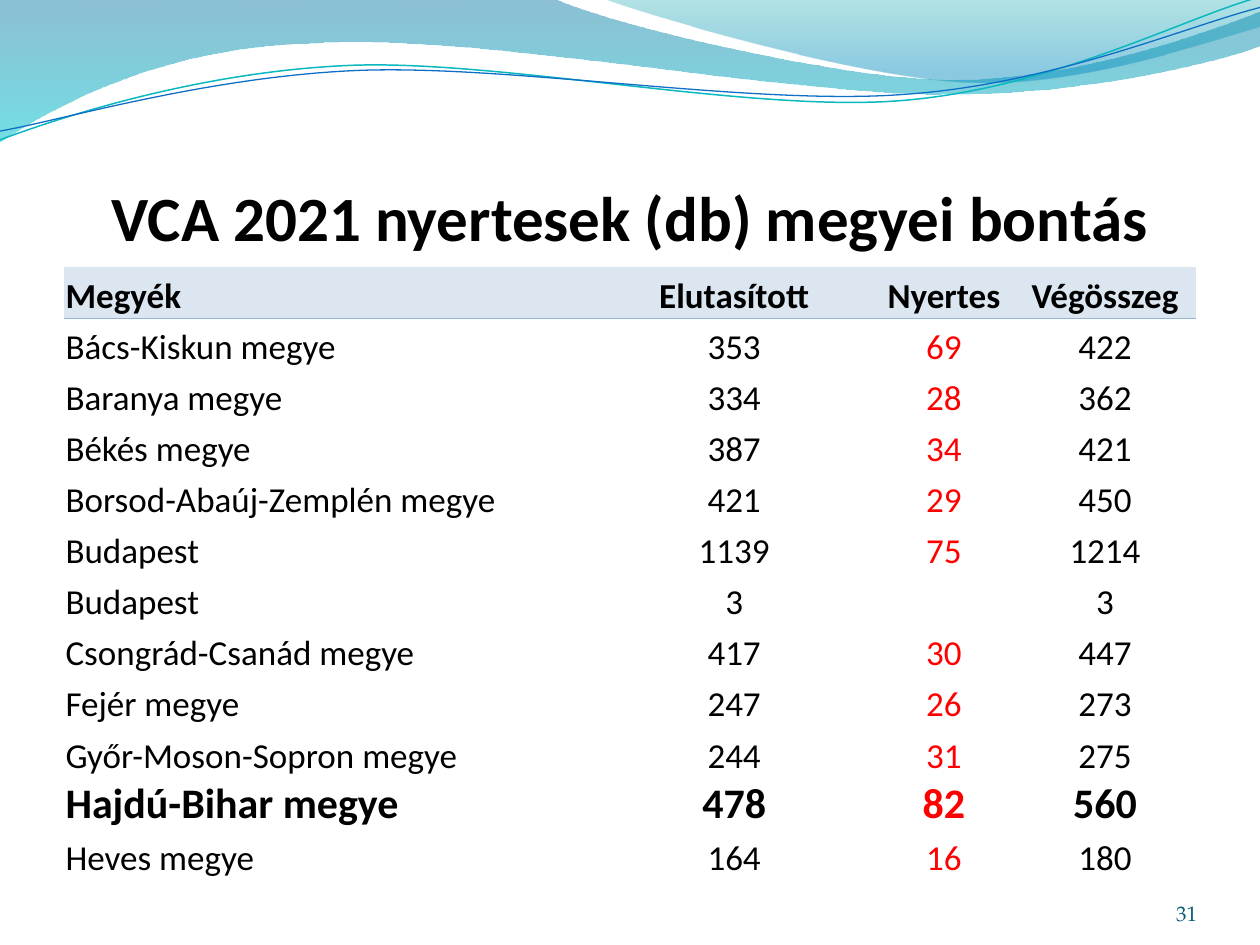
from math import cos, radians, sin

from lxml.etree import SubElement
from pptx import Presentation
from pptx.dml.color import RGBColor
from pptx.enum.text import MSO_ANCHOR as Anchor, PP_ALIGN as Align
from pptx.oxml import parse_xml
from pptx.oxml.ns import nsdecls, qn
from pptx.util import Pt

COLORS = {
    "text": "000000", "winner": "FF0000", "header": "DCE6F1", "rule": "95B3D7",
    "number": "045D75", "teal_line": "0AB8BF", "blue_line": "0F6FC6",
    "deep_blue": "0074A1", "aqua": "00C6CF", "teal": "00A1A9", "sky": "008BBF",
}
TITLE = "VCA 2021 nyertesek (db) megyei bontás"
PAGE_NUMBER = "31"
HEADER = ("Megyék", "Elutasított", "Nyertes", "Végösszeg")
COUNTIES = [
    ("Bács-Kiskun megye", 353, 69, 422),
    ("Baranya megye", 334, 28, 362),
    ("Békés megye", 387, 34, 421),
    ("Borsod-Abaúj-Zemplén megye", 421, 29, 450),
    ("Budapest", 1139, 75, 1214),
    ("Budapest", 3, "", 3),
    ("Csongrád-Csanád megye", 417, 30, 447),
    ("Fejér megye", 247, 26, 273),
    ("Győr-Moson-Sopron megye", 244, 31, 275),
    ("Hajdú-Bihar megye", 478, 82, 560),
    ("Heves megye", 164, 16, 180),
]
HIGHLIGHT = "Hajdú-Bihar megye"
WINNER_COL = 2
COL_WIDTHS = (303.3, 159.1, 80.6, 103.6)
ROW_HEIGHT = 29.18

# Outlines: a start point, then segments of one point (line) or three (Bézier curve).
# Gradient stops: position, colour, opacity in percent.
WAVES = [
    {"start": (0, 0), "stops": [(0, "deep_blue", 45), (1, "aqua", 55)], "segments": [
        [(316.8, -0.7)],
        [(342.7, 12.2), (478.1, 45.4), (545.8, 45.4)],
        [(614.2, 45.4), (689.8, 18.7), (720, 6.5)],
        [(720.7, 25.9)],
        [(707.8, 31.7), (626.4, 54.7), (537.1, 54)],
        [(447.8, 54), (275, 20.2), (185, 24.5)],
        [(92.9, 25.9), (33.1, 59.8), (-0.7, 81.4)]]},
    {"start": (344.9, -0.7), "stops": [(0, "teal", 30), (0.8, "sky", 45)], "segments": [
        [(366.5, 7.9), (491, 44.6), (553.7, 46.8)],
        [(616.3, 49.7), (691.9, 23), (720, 15.1)],
        [(720, 0)]]},
    {"start": (0, 79.9), "line": ("teal_line", 0.85), "center": (359.3, 41.4), "segments": [
        [(34.6, 67), (113.8, 41), (199.4, 37.4)],
        [(284.4, 33.8), (427, 64.1), (513.4, 57.6)],
        [(599.8, 51.1), (675.4, 10.8), (718.6, -1.4)]]},
    {"start": (0, 74.9), "line": ("blue_line", 0.75), "center": (359.6, 42.5), "segments": [
        [(33.8, 69.1), (118.1, 43.9), (203.8, 40.3)],
        [(290.2, 36.7), (429.8, 60.5), (516.2, 54)],
        [(601.9, 48.2), (677.5, 15.1), (720, 4.3)]]},
]
LINE_TILT = 2.7


def rgb(name):
    return RGBColor.from_string(COLORS[name])


def level(point, center):
    """Turn a point clockwise by the tilt, to undo the rotation of its shape."""
    a = radians(LINE_TILT)
    dx, dy = point[0] - center[0], point[1] - center[1]
    return center[0] + dx * cos(a) - dy * sin(a), center[1] + dx * sin(a) + dy * cos(a)


def bend(sp, segments):
    """Join the three straight steps of each curve segment into one Bézier curve."""
    steps = iter(list(sp._element.iter(qn("a:lnTo"))))
    for seg in segments:
        group = [next(steps) for _ in seg]
        if len(group) == 3:
            curve = parse_xml(f'<a:cubicBezTo {nsdecls("a")}/>')
            group[0].addprevious(curve)
            for step in group:
                curve.append(step[0])
                step.getparent().remove(step)


def add_wave(s, wave):
    filled = "stops" in wave
    points = [wave["start"], *(pt for seg in wave["segments"] for pt in seg)]
    if not filled:
        points = [level(pt, wave["center"]) for pt in points]
    start, *rest = [(Pt(x), Pt(y)) for x, y in points]
    builder = s.shapes.build_freeform(*start)
    builder.add_line_segments(rest, close=filled)
    sp = builder.convert_to_shape()
    bend(sp, wave["segments"])
    sp.shadow.inherit = False
    if not filled:
        color, width = wave["line"]
        sp.rotation = -LINE_TILT
        sp.fill.background()
        sp.line.color.rgb = rgb(color)
        sp.line.width = Pt(width)
        return
    sp.line.fill.background()
    sp.fill.gradient()
    sp.fill.gradient_angle = 270
    for stop, (position, color, _) in zip(sp.fill.gradient_stops, wave["stops"]):
        stop.position = position
        stop.color.rgb = rgb(color)
    clrs = sp._element.spPr.iter(qn("a:srgbClr"))
    for clr, (_, _, opacity) in zip(clrs, wave["stops"]):
        SubElement(clr, qn("a:alpha"), val=str(opacity * 1000))


def write(tf, text, size, color="text", bold=False, align=Align.LEFT, font="Calibri"):
    p = tf.paragraphs[0]
    if text != "":
        p.text = str(text)
    p.alignment = align
    f = p.font
    f.name, f.size, f.bold = font, Pt(size), bold
    f.color.rgb = rgb(color)


def add_text(s, box, top_inset, text, size, **style):
    tf = s.shapes.add_textbox(*map(Pt, box)).text_frame
    tf.word_wrap = True
    tf.vertical_anchor = Anchor.BOTTOM
    tf.margin_left = tf.margin_right = tf.margin_bottom = 0
    tf.margin_top = Pt(top_inset)
    write(tf, text, size, **style)


def add_county_table(s):
    rows = [HEADER, *COUNTIES]
    table = s.shapes.add_table(len(rows), len(HEADER), Pt(36.7), Pt(152.6),
                               Pt(sum(COL_WIDTHS)), Pt(ROW_HEIGHT * len(rows))).table
    table.first_row = table.horz_banding = False
    no_style = "{2D5ABB26-0587-4C30-8999-92F81FD0307C}"
    table._tbl.tblPr.find(qn("a:tableStyleId")).text = no_style
    for col, width in zip(table.columns, COL_WIDTHS):
        col.width = Pt(width)
    for r, row in enumerate(rows):
        table.rows[r].height = Pt(ROW_HEIGHT)
        header, highlight = r == 0, row[0] == HIGHLIGHT
        for c, value in enumerate(row):
            cell = table.cell(r, c)
            cell.vertical_anchor = Anchor.BOTTOM
            cell.margin_left = cell.margin_right = cell.margin_top = Pt(0.75)
            cell.margin_bottom = 0
            write(cell.text_frame, value, 24 if highlight else 20,
                  color="winner" if c == WINNER_COL and not header else "text",
                  bold=header or highlight,
                  align=Align.CENTER if c else Align.LEFT)
            if header:
                cell.fill.solid()
                cell.fill.fore_color.rgb = rgb("header")
                cell._tc.tcPr.insert(0, parse_xml(
                    f'<a:lnB {nsdecls("a")} w="{Pt(0.5)}"><a:solidFill>'
                    f'<a:srgbClr val="{COLORS["rule"]}"/></a:solidFill></a:lnB>'))
            else:
                cell.fill.background()


def main():
    prs = Presentation()
    prs.slide_width, prs.slide_height = Pt(720), Pt(540)
    s = prs.slides.add_slide(prs.slide_layouts[6])
    for wave in WAVES:
        add_wave(s, wave)
    add_text(s, (36, 55.2, 648, 90), 3.6, TITLE, 36, bold=True, align=Align.CENTER)
    add_county_table(s)
    add_text(s, (624, 500.5, 60, 28.75), 0, PAGE_NUMBER, 12, color="number",
             align=Align.RIGHT, font="TeX Gyre Pagella")
    prs.save("out.pptx")


if __name__ == "__main__":
    main()
